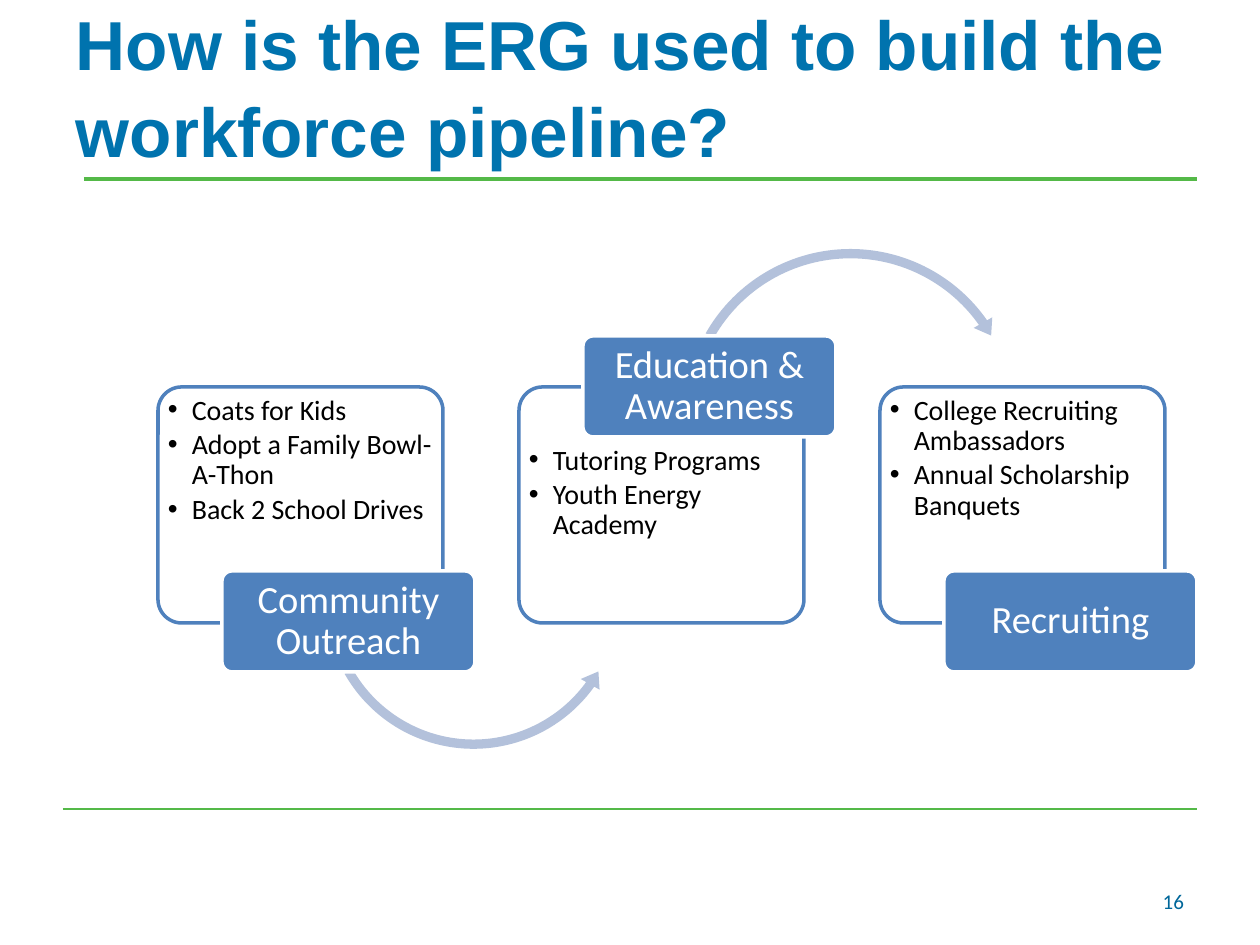
from dataclasses import dataclass

from lxml import etree
from pptx import Presentation
from pptx import util as u
from pptx.dml.color import RGBColor
from pptx.enum import shapes, text
from pptx.oxml import ns

PX = u.Inches(1) // 126


@dataclass(frozen=True)
class Theme:
    """Colours, fonts and type sizes of the slide."""
    title: str = "0073AE"
    number: str = "00679A"
    rule: str = "54B948"
    blue: str = "4F81BD"
    arrow: str = "B3C1DB"
    white: str = "FFFFFF"
    black: str = "000000"
    heading_font: str = "Arial"
    body_font: str = "Calibri"
    title_size: float = 39.6
    label_size: int = 22
    list_size: int = 16
    number_size: int = 12


THEME = Theme()
SHAPE = shapes.MSO_AUTO_SHAPE_TYPE


def px(*lengths):
    """Turn pixel lengths into EMU."""
    return [length * PX for length in lengths]


def add_tag(parent, tag, **attributes):
    """Append a DrawingML element to a parent."""
    return etree.SubElement(parent, ns.qn(tag), attributes)


def style(para, size, color, name=THEME.body_font, bold=False):
    """Set the font of a paragraph."""
    para.font.size = u.Pt(size)
    para.font.name = name
    para.font.bold = bold
    para.font.color.rgb = RGBColor.from_string(color)


def set_frame(frame, anchor, insets):
    """Wrap a text frame and set its anchor and left, top, right, bottom insets."""
    frame.word_wrap = True
    frame.vertical_anchor = anchor
    (frame.margin_left, frame.margin_top,
     frame.margin_right, frame.margin_bottom) = px(*insets)


def add_preset(page, kind, box, fill, line=None):
    """Add a flat preset shape with an optional outline."""
    shape = page.shapes.add_shape(kind, *px(*box))
    shape.shadow.inherit = False
    shape.fill.solid()
    shape.fill.fore_color.rgb = RGBColor.from_string(fill)
    if line:
        shape.line.color.rgb = RGBColor.from_string(line)
        shape.line.width = u.Pt(2)
    else:
        shape.line.fill.background()
    return shape


def add_rule(page, left, right, top, width):
    """Draw a horizontal green rule."""
    rule = page.shapes.add_connector(
        shapes.MSO_CONNECTOR.STRAIGHT, *px(left, top, right, top))
    rule.line.color.rgb = RGBColor.from_string(THEME.rule)
    rule.line.width = u.Pt(width)
    add_tag(rule.element.spPr, "a:effectLst")


def add_text(page, box, words):
    """Add a middle-anchored text box and return its paragraph."""
    frame = page.shapes.add_textbox(*px(*box)).text_frame
    set_frame(frame, text.MSO_ANCHOR.MIDDLE, (13, 6, 13, 6))
    para = frame.paragraphs[0]
    para.text = words
    return para


def add_card(page, box, items, text_top):
    """Add a rounded card holding a bulleted list."""
    card = add_preset(page, SHAPE.ROUNDED_RECTANGLE, box, THEME.white, THEME.blue)
    card.adjustments[0] = 0.1
    color = card.element.spPr.find(ns.qn("a:solidFill"))[0]
    add_tag(color, "a:alpha", val="90000")
    frame = card.text_frame
    set_frame(frame, text.MSO_ANCHOR.TOP, (3, text_top, 3, 2))
    for index, item in enumerate(items):
        para = frame.add_paragraph() if index else frame.paragraphs[0]
        para.text = item
        para.alignment = text.PP_ALIGN.LEFT
        para.line_spacing = 0.9
        para.space_after = u.Pt(2.5)
        props = para._p.get_or_add_pPr()
        props.set("marL", str(24 * PX))
        props.set("indent", str(-24 * PX))
        add_tag(props, "a:buFont", typeface=THEME.heading_font)
        add_tag(props, "a:buChar", char="•")
        style(para, THEME.list_size, THEME.black)


def add_label(page, box, words):
    """Add the blue name plate of a stage."""
    label = add_preset(page, SHAPE.ROUNDED_RECTANGLE, box, THEME.blue, THEME.white)
    label.adjustments[0] = 0.1
    set_frame(label.text_frame, text.MSO_ANCHOR.MIDDLE, (6, 4, 6, 4))
    para = label.text_frame.paragraphs[0]
    para.text = words
    para.alignment = text.PP_ALIGN.CENTER
    para.line_spacing = 0.9
    style(para, THEME.label_size, THEME.white)


def add_arc(page, kind, box, thickness, degrees, head):
    """Add a circular arrow whose three angles are given in degrees."""
    arc = add_preset(page, kind, box, THEME.arrow)
    values = [thickness, *(angle * 0.6 for angle in degrees), head]
    for index, value in enumerate(values):
        arc.adjustments[index] = value


def add_stage(page, box, name, items, raised, arc):
    """Place a card, its name plate and the arrow leading to the next stage."""
    left, top, width, height = box
    add_card(page, box, items, 52 if raised else 2)
    if arc:
        kind, dx, dy, size, *shape_values = arc
        add_arc(page, kind, (left + dx, top + dy, size, size), *shape_values)
    label_top = top - 51 if raised else top + height - 52
    add_label(page, (left + 64, label_top, 253, 101), name)


def add_process(page, box):
    """Lay out the three stages at an equal pitch."""
    left, top, width, height = box
    stages = [
        ("Community Outreach",
         ["Coats for Kids", "Adopt a Family Bowl-A-Thon", "Back 2 School Drives"],
         (SHAPE.LEFT_CIRCULAR_ARROW, 161, 59, 309, 0.03, (6.1, 35.7, 150.41), 0.035)),
        ("Education & Awareness",
         ["Tutoring Programs", "Youth Energy Academy"],
         (SHAPE.CIRCULAR_ARROW, 159, -144, 345, 0.027, (5.42, 324.99, 209.59), 0.031)),
        ("Recruiting",
         ["College Recruiting Ambassadors", "Annual Scholarship Banquets"],
         None),
    ]
    card_width = 285
    pitch = (width - card_width) // (len(stages) - 1)
    for index, (name, items, arc) in enumerate(stages):
        card = (left + index * pitch, top, card_width, height)
        add_stage(page, card, name, items, index % 2 == 1, arc)


def add_header(page, box):
    """Place the title with the rule under it."""
    left, top, width, height = box
    add_rule(page, left + 21, left + 1134, top + 179, 2)
    para = add_text(page, (left, top, width, height),
                    "How is the ERG used to build the workforce pipeline?")
    para.line_spacing = 1.05
    style(para, THEME.title_size, THEME.title, THEME.heading_font, True)


def add_footer(page, box):
    """Place the lower rule and the page number."""
    left, top, width, height = box
    add_rule(page, left, left + width, top, 1)
    para = add_text(page, (left + width - 53, top + height - 50, 53, 50), "16")
    para.alignment = text.PP_ALIGN.RIGHT
    style(para, THEME.number_size, THEME.number)


def main():
    """Build and save the deck."""
    deck = Presentation()
    deck.slide_width, deck.slide_height = px(1260, 945)
    page = deck.slides.add_slide(deck.slide_layouts[6])
    add_header(page, (63, 0, 1197, 168))
    add_process(page, (158, 387, 1007, 236))
    add_footer(page, (63, 809, 1134, 117))
    deck.save("out.pptx")


if __name__ == "__main__":
    main()
